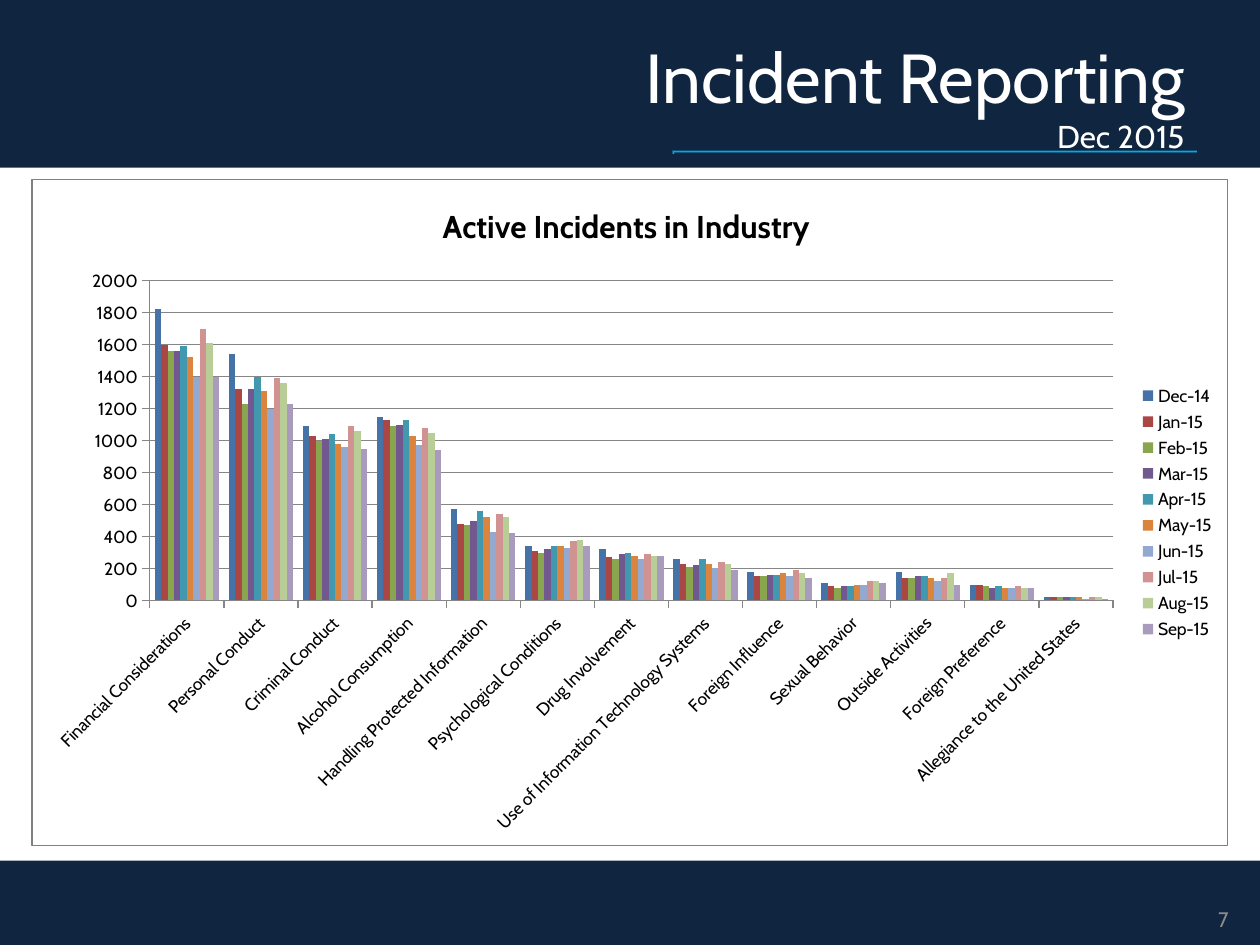
from dataclasses import dataclass

from lxml import etree
from pptx import Presentation
from pptx import util as u
from pptx.chart import data as cd
from pptx.dml.color import RGBColor
from pptx.enum import chart as ch, shapes, text
from pptx.oxml import parse_xml
from pptx.oxml.ns import nsdecls, qn


@dataclass(frozen=True)
class Theme:
    font: str = "Cabin"
    navy: str = "10253F"
    cyan: str = "00B0F0"
    white: str = "FFFFFF"
    black: str = "000000"
    rule: str = "868686"
    border: str = "808080"
    muted: str = "8C8C8C"
    title: float = 39.6
    subtitle: float = 18
    chart_title: float = 18
    label: float = 10
    number: float = 12
    series: tuple = ("4572A7", "AA4643", "89A54E", "71588F", "4198AF",
                     "DB843D", "93A9CF", "D19392", "B9CD96", "A99BBD")


T = Theme()

MONTHS = ("Dec-14", "Jan-15", "Feb-15", "Mar-15", "Apr-15",
          "May-15", "Jun-15", "Jul-15", "Aug-15", "Sep-15")

INCIDENTS = {
    "Financial Considerations": (1820, 1600, 1560, 1560, 1590, 1520, 1400, 1700, 1610, 1400),
    "Personal Conduct": (1540, 1320, 1230, 1320, 1400, 1310, 1200, 1390, 1360, 1230),
    "Criminal Conduct": (1090, 1030, 1000, 1010, 1040, 980, 960, 1090, 1060, 950),
    "Alcohol Consumption": (1150, 1130, 1090, 1100, 1130, 1030, 970, 1080, 1050, 940),
    "Handling Protected Information": (570, 480, 470, 500, 560, 520, 430, 540, 520, 420),
    "Psychological Conditions": (340, 310, 300, 320, 340, 340, 330, 370, 380, 340),
    "Drug Involvement": (320, 270, 260, 290, 300, 280, 260, 290, 280, 280),
    "Use of Information Technology Systems": (260, 230, 210, 220, 260, 230, 200, 240, 230, 190),
    "Foreign Influence": (180, 150, 150, 160, 160, 170, 150, 190, 170, 140),
    "Sexual Behavior": (110, 90, 80, 90, 90, 100, 100, 120, 120, 110),
    "Outside Activities": (180, 140, 140, 150, 150, 140, 120, 140, 170, 100),
    "Foreign Preference": (100, 100, 90, 80, 90, 80, 80, 90, 80, 80),
    "Allegiance to the United States": (20, 20, 20, 20, 20, 20, 10, 20, 20, 10),
}


def rgb(value):
    return RGBColor.from_string(value)


def box(*lengths):
    return [u.Cm(n) for n in lengths]


def style(font, size, color, bold=False):
    font.name, font.size, font.bold = T.font, u.Pt(size), bold
    font.color.rgb = rgb(color)


def add_band(s, place, color):
    sp = s.shapes.add_shape(shapes.MSO_SHAPE.RECTANGLE, *box(*place))
    sp.shadow.inherit = False
    sp.fill.solid()
    sp.fill.fore_color.rgb = rgb(color)
    sp.line.fill.background()
    return sp


def add_glow_rule(s, place):
    sp = add_band(s, place, T.navy)
    stops = "".join(f'<a:gs pos="{pos}"><a:srgbClr val="{color}"/></a:gs>'
                    for pos, color in ((0, T.navy), (50000, T.cyan), (100000, T.navy)))
    gradient = parse_xml(
        f'<a:gradFill {nsdecls("a")} rotWithShape="1"><a:gsLst>{stops}</a:gsLst>'
        '<a:path path="rect"><a:fillToRect l="100000" t="100000"/></a:path></a:gradFill>')
    props = sp.element.spPr
    props.replace(props.find(qn("a:solidFill")), gradient)


def add_text(s, place, lines, align):
    tf = s.shapes.add_textbox(*box(*place)).text_frame
    tf.word_wrap = True
    tf.vertical_anchor = text.MSO_ANCHOR.MIDDLE
    p = tf.paragraphs[0]
    p.alignment = align
    for i, (words, size, color) in enumerate(lines):
        if i:
            p.add_line_break()
        r = p.add_run()
        r.text = words
        style(r.font, size, color)


def place_plot(chart, chart_place, plot_place):
    area = chart.element.find(".//" + qn("c:plotArea"))
    old = area.find(qn("c:layout"))
    if old is not None:
        area.remove(old)
    layout = etree.Element(qn("c:layout"))
    manual = etree.SubElement(layout, qn("c:manualLayout"))
    shares = [part / whole for part, whole in zip(plot_place, chart_place[2:] * 2)]
    for tag, value in (("layoutTarget", "inner"), ("xMode", "edge"), ("yMode", "edge"),
                       *zip("xywh", shares)):
        etree.SubElement(manual, qn(f"c:{tag}")).set("val", str(value))
    area.insert(0, layout)


def frame_chart(chart):
    chart.element.find(qn("c:chart")).addnext(parse_xml(
        f'<c:spPr {nsdecls("c", "a")}>'
        f'<a:solidFill><a:srgbClr val="{T.white}"/></a:solidFill>'
        f'<a:ln w="{u.Pt(0.75)}"><a:solidFill><a:srgbClr val="{T.border}"/></a:solidFill></a:ln>'
        '</c:spPr>'))


def style_axis(axis):
    axis.major_tick_mark = ch.XL_TICK_MARK.OUTSIDE
    axis.minor_tick_mark = ch.XL_TICK_MARK.NONE
    axis.format.line.color.rgb = rgb(T.rule)
    style(axis.tick_labels.font, T.label, T.black)


def add_incident_chart(s, place, plot_place):
    data = cd.CategoryChartData(number_format="General")
    data.categories = list(INCIDENTS)
    for month, values in zip(MONTHS, zip(*INCIDENTS.values())):
        data.add_series(month, values)
    chart = s.shapes.add_chart(ch.XL_CHART_TYPE.COLUMN_CLUSTERED, *box(*place), data).chart
    style(chart.font, T.label, T.black)
    frame_chart(chart)

    chart.has_title = True
    r = chart.chart_title.text_frame.paragraphs[0].add_run()
    r.text = "Active Incidents in Industry "
    style(r.font, T.chart_title, T.black, bold=True)
    chart.chart_title.include_in_layout = False

    chart.has_legend = True
    chart.legend.position = ch.XL_LEGEND_POSITION.RIGHT
    chart.legend.include_in_layout = False
    style(chart.legend.font, T.label, T.black)

    plot = chart.plots[0]
    plot.gap_width, plot.overlap, plot.vary_by_categories = 150, 0, False
    for series, color in zip(plot.series, T.series):
        series.invert_if_negative = False
        series.format.fill.solid()
        series.format.fill.fore_color.rgb = rgb(color)

    cats, vals = chart.category_axis, chart.value_axis
    style_axis(cats)
    style_axis(vals)
    cats._element.find(qn("c:txPr")).find(qn("a:bodyPr")).set("rot", "-2700000")
    vals.minimum_scale, vals.maximum_scale, vals.major_unit = 0, 2000, 200
    vals.has_major_gridlines = True
    vals.major_gridlines.format.line.color.rgb = rgb(T.rule)
    place_plot(chart, place, plot_place)


def main():
    prs = Presentation()
    prs.slide_width, prs.slide_height = box(25.4, 19.05)
    s = prs.slides.add_slide(prs.slide_layouts[6])
    s.background.fill.solid()
    s.background.fill.fore_color.rgb = rgb(T.navy)

    add_band(s, (0, 3.38, 25.4, 13.97), T.white)
    add_glow_rule(s, (2.96, 2.96, 21.17, 0.13))
    add_text(s, (2.96, 0.63, 21.17, 2.54),
             (("Incident Reporting", T.title, T.white), ("Dec 2015", T.subtitle, T.white)),
             text.PP_ALIGN.RIGHT)
    add_incident_chart(s, (0.63, 3.6, 24.13, 13.46), (2.38, 2.05, 19.44, 6.46))
    add_text(s, (24.13, 18.21, 1.07, 0.64), (("7", T.number, T.muted),), text.PP_ALIGN.CENTER)
    prs.save("out.pptx")


if __name__ == "__main__":
    main()
